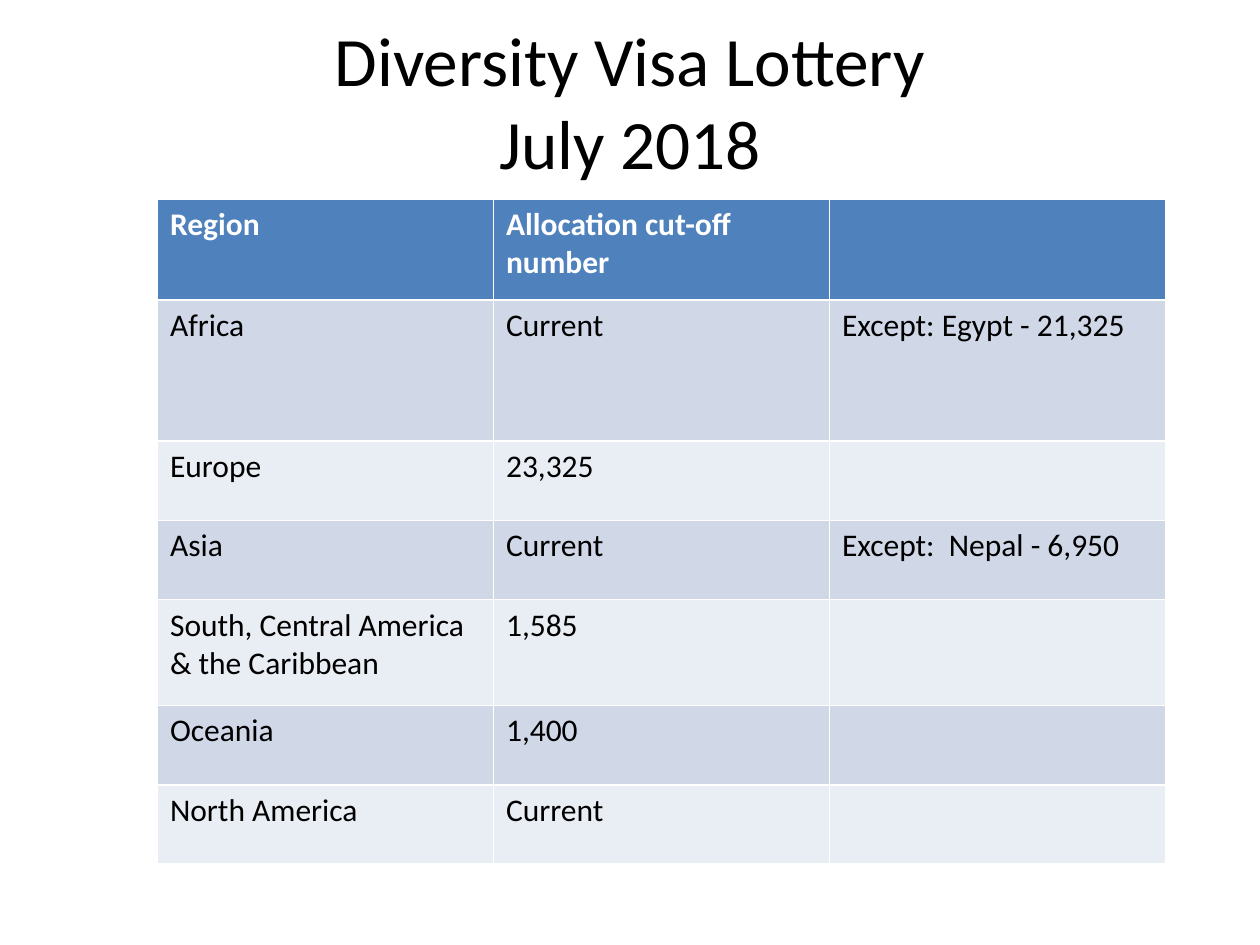
from pptx import Presentation
from pptx.dml.color import RGBColor
from pptx.enum.text import MSO_ANCHOR, MSO_AUTO_SIZE, PP_ALIGN
from pptx.util import Inches, Pt

CENTER = PP_ALIGN.CENTER
MIDDLE = MSO_ANCHOR.MIDDLE
NO_AUTOFIT = MSO_AUTO_SIZE.NONE
TITLE_ONLY = 5
FONT = "Calibri"
COLORS = {
    "text": "000000",
    "header_text": "FFFFFF",
    "header": "4F81BD",
    "odd_row": "D0D8E8",
    "even_row": "E9EDF4",
}
TITLE_LINES = ["Diversity Visa Lottery", "July 2018"]
REGIONS = [
    ("Region", "Allocation cut-off number", ""),
    ("Africa", "Current", "Except: Egypt - 21,325"),
    ("Europe", "23,325", ""),
    ("Asia", "Current", "Except:  Nepal - 6,950"),
    ("South, Central America & the Caribbean", "1,585", ""),
    ("Oceania", "1,400", ""),
    ("North America", "Current", ""),
]
ROW_HEIGHTS = [0.8, 1.12, 0.63, 0.63, 0.84, 0.63, 0.63]


def color(name):
    return RGBColor.from_string(COLORS[name])


def add_run(paragraph, text, size, color_name, bold=False):
    run = paragraph.add_run()
    run.text = text
    run.font.name = FONT
    run.font.size = Pt(size)
    run.font.bold = bold
    run.font.color.rgb = color(color_name)


def set_title(slide):
    title = slide.shapes.title
    title.left, title.top = Inches(0.75), Inches(0.17)
    title.width, title.height = Inches(8.5), Inches(1.25)
    frame = title.text_frame
    frame.auto_size = NO_AUTOFIT
    frame.word_wrap = True
    frame.vertical_anchor = MIDDLE
    paragraph = frame.paragraphs[0]
    paragraph.alignment = CENTER
    for index, line in enumerate(TITLE_LINES):
        if index:
            paragraph.add_line_break()
        add_run(paragraph, line, 39.6, "text")


def fill_cell(cell, text, fill_name, text_color, bold):
    cell.fill.solid()
    cell.fill.fore_color.rgb = color(fill_name)
    paragraph = cell.text_frame.paragraphs[0]
    if text:
        add_run(paragraph, text, 18, text_color, bold)


def add_region_table(slide):
    table = slide.shapes.add_table(
        len(REGIONS), len(REGIONS[0]),
        Inches(1.25), Inches(1.58), Inches(8), Inches(sum(ROW_HEIGHTS)),
    ).table
    for row_index, values in enumerate(REGIONS):
        table.rows[row_index].height = Inches(ROW_HEIGHTS[row_index])
        is_header = row_index == 0
        band = "odd_row" if row_index % 2 else "even_row"
        fill_name = "header" if is_header else band
        text_color = "header_text" if is_header else "text"
        for column_index, text in enumerate(values):
            cell = table.cell(row_index, column_index)
            fill_cell(cell, text, fill_name, text_color, is_header)


def main():
    presentation = Presentation()
    presentation.slide_width = Inches(10)
    presentation.slide_height = Inches(7.5)
    slide = presentation.slides.add_slide(presentation.slide_layouts[TITLE_ONLY])
    set_title(slide)
    add_region_table(slide)
    presentation.save("out.pptx")


if __name__ == "__main__":
    main()
